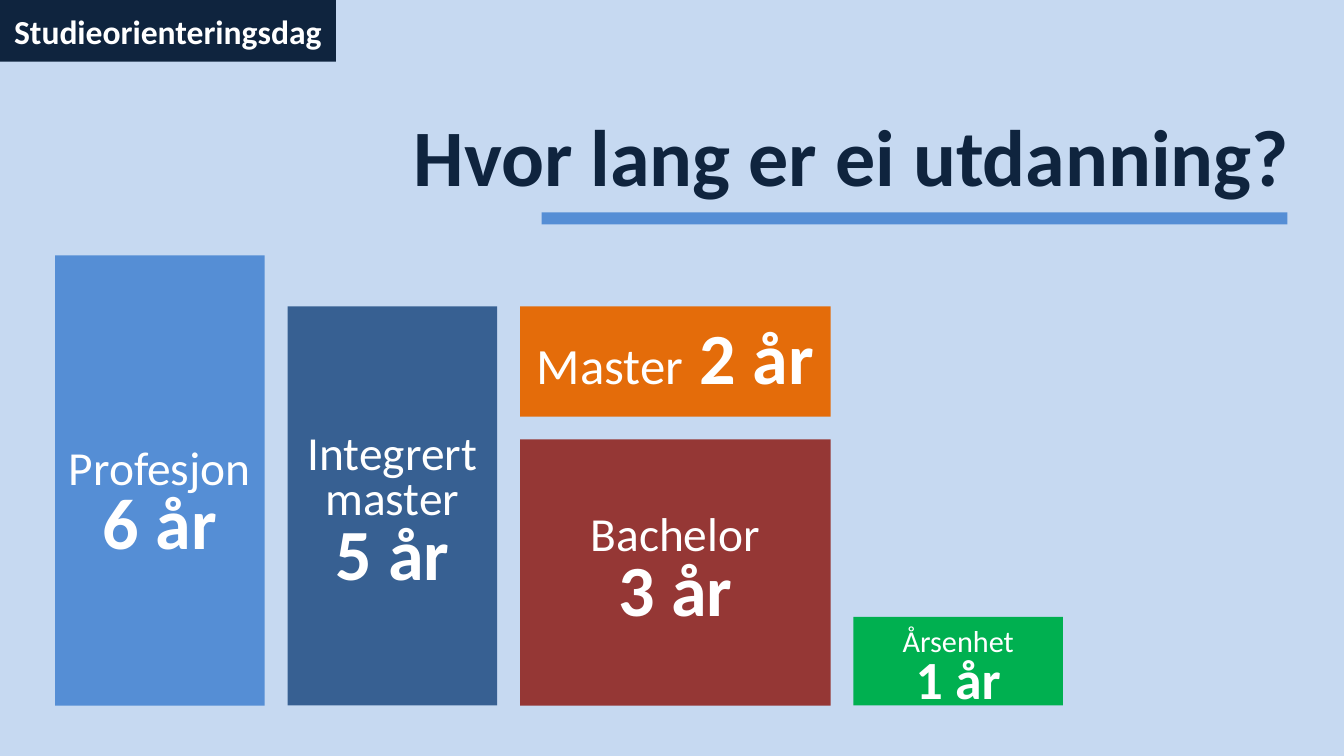
"""Build a slide comparing the length of study programmes as blocks."""
from dataclasses import dataclass

from pptx import Presentation
from pptx import util as u
from pptx.dml.color import RGBColor
from pptx.enum import shapes, text


@dataclass(frozen=True)
class Theme:
    """Colours, font and type sizes of the slide."""
    font: str = "Calibri"
    background: str = "C6D9F1"
    dark: str = "0F243E"
    light: str = "FFFFFF"
    accent: str = "558ED5"
    navy: str = "376092"
    orange: str = "E46C0A"
    red: str = "953735"
    green: str = "00B050"
    title: float = 42.9
    tag: float = 18
    years: float = 38.6
    name: float = 25.4
    wide_name: float = 27.2
    small_years: float = 28.8
    small_name: float = 16.2


THEME = Theme()
WIDTH = 10
HEIGHT = WIDTH * 9 / 16
LEFT, BASELINE, GAP = 0.41, 5.25, 0.17
LABEL_INSETS = (0.09, 0.04, 0.09, 0.04)

TAG = "Studieorienteringsdag"
TITLE = "Hvor lang er ei utdanning?"


def stacked(name, years, name_size=THEME.name, years_size=THEME.years):
    """Return a label with the name above the number of years."""
    return [[(name, name_size, False)], [(years, years_size, True)]]


COLUMNS = [
    (1.56, [dict(height=3.35, color=THEME.accent, shift=0.19,
                 label=stacked("Profesjon", "6 år"))]),
    (1.56, [dict(height=2.97, color=THEME.navy, shift=0.06,
                 label=stacked("Integrert master", "5 år"))]),
    (2.31, [dict(height=1.98, color=THEME.red, shift=0,
                 label=stacked("Bachelor", "3 år")),
            dict(height=0.82, color=THEME.orange, shift=0.02,
                 label=[[("Master", THEME.wide_name, False),
                         (" 2 år", THEME.years, True)]])]),
    (1.56, [dict(height=0.66, color=THEME.green, shift=0.06,
                 label=stacked("Årsenhet", "1 år", THEME.small_name,
                               THEME.small_years))]),
]


def write(shape, paragraphs, *, color=THEME.light, align=text.PP_ALIGN.CENTER,
          spacing=None, insets=(0.1, 0.05, 0.1, 0.05)):
    """Fill a shape with paragraphs of (words, size, bold) runs."""
    frame = shape.text_frame
    frame.word_wrap = True
    frame.auto_size = text.MSO_AUTO_SIZE.NONE
    frame.vertical_anchor = text.MSO_ANCHOR.MIDDLE
    (frame.margin_left, frame.margin_top,
     frame.margin_right, frame.margin_bottom) = map(u.Inches, insets)
    for index, runs in enumerate(paragraphs):
        paragraph = frame.add_paragraph() if index else frame.paragraphs[0]
        paragraph.alignment = align
        paragraph.line_spacing = spacing
        paragraph.space_before = u.Pt(0)
        for words, size, bold in runs:
            run = paragraph.add_run()
            run.text = words
            run.font.name = THEME.font
            run.font.size = u.Pt(size)
            run.font.bold = bold
            run.font.color.rgb = RGBColor.from_string(color)


def add_block(slide, box, color):
    """Add a plain filled rectangle."""
    shape = slide.shapes.add_shape(shapes.MSO_SHAPE.RECTANGLE,
                                   *map(u.Inches, box))
    shape.shadow.inherit = False
    shape.fill.solid()
    shape.fill.fore_color.rgb = RGBColor.from_string(color)
    shape.line.fill.background()
    return shape


def add_columns(slide):
    """Stack each column's blocks upwards from the common baseline."""
    left = LEFT
    for width, blocks in COLUMNS:
        bottom = BASELINE
        for block in blocks:
            height = block["height"]
            top = bottom - height
            add_block(slide, (left, top, width, height), block["color"])
            label = slide.shapes.add_textbox(*map(
                u.Inches, (left, top + block["shift"], width, height)))
            write(label, block["label"], spacing=0.8, insets=LABEL_INSETS)
            bottom = top - GAP
        left += width + GAP


def main():
    """Build and save the presentation."""
    presentation = Presentation()
    presentation.slide_width = u.Inches(WIDTH)
    presentation.slide_height = u.Inches(HEIGHT)
    slide = presentation.slides.add_slide(presentation.slide_layouts[5])
    slide.background.fill.solid()
    slide.background.fill.fore_color.rgb = RGBColor.from_string(THEME.background)

    add_columns(slide)
    tag = add_block(slide, (0, 0, WIDTH / 4, 0.46), THEME.dark)
    write(tag, [[(TAG, THEME.tag, True)]])

    title = slide.shapes.title
    title.left, title.top, title.width, title.height = map(
        u.Inches, (2.69, 0.42, 7, 1.6))
    write(title, [[(TITLE, THEME.title, True)]], color=THEME.dark,
          align=text.PP_ALIGN.RIGHT, spacing=0.8)
    add_block(slide, (4.03, 1.58, 5.55, 0.09), THEME.accent)

    presentation.save("out.pptx")


if __name__ == "__main__":
    main()
